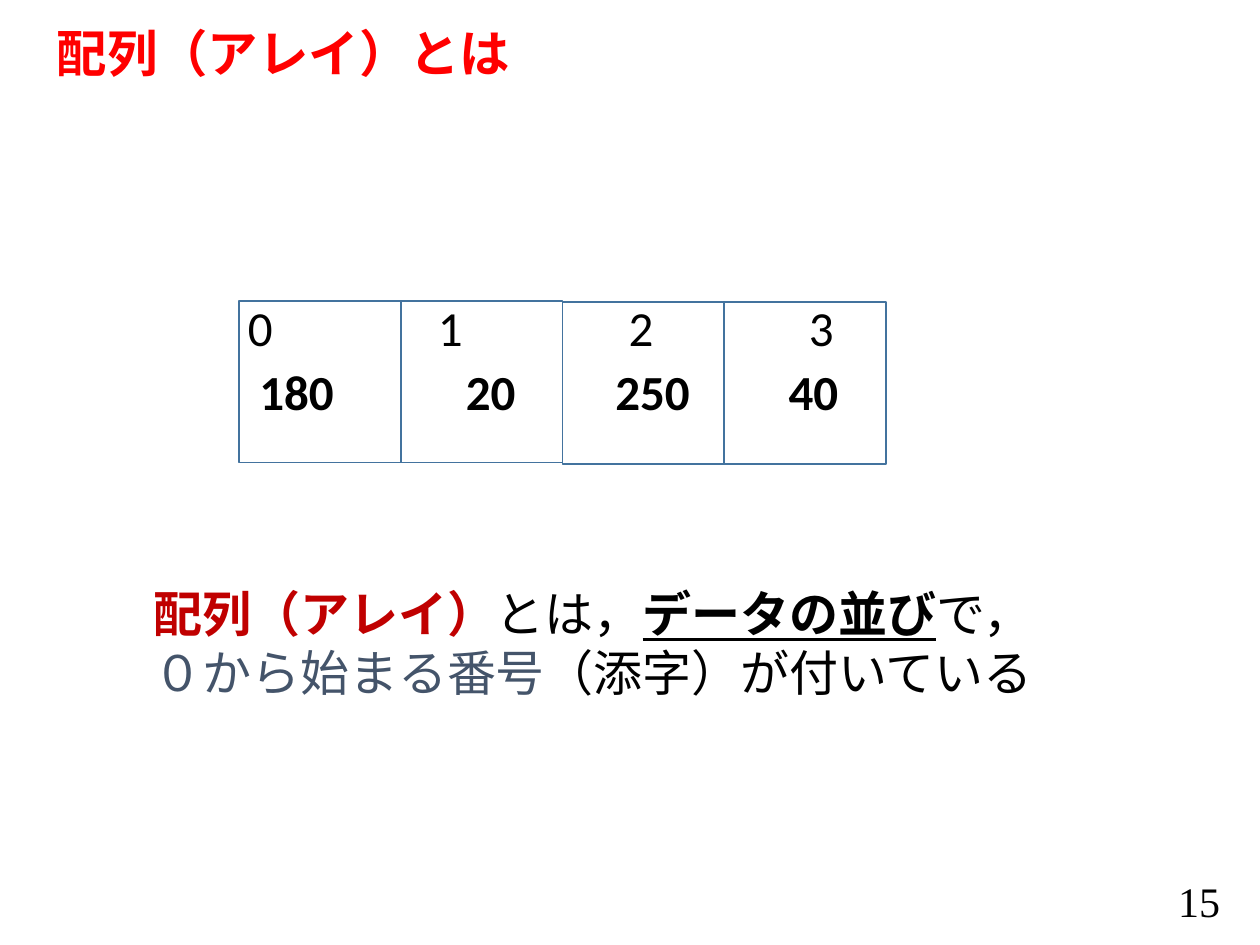
"""Build the slide that explains what an array is."""
from dataclasses import dataclass

from lxml import etree
from pptx import Presentation
from pptx.dml.color import RGBColor
from pptx.enum import shapes, text
from pptx.oxml import ns
from pptx.util import Pt


@dataclass
class Part:
    words: str
    color: str = "000000"
    size: float = 28
    font: str = "Arial"
    bold: bool = False
    underline: bool = False


@dataclass
class Box:
    left: float
    top: float
    width: float
    height: float

    def lengths(self) -> tuple:
        return tuple(Pt(v) for v in (self.left, self.top, self.width, self.height))


@dataclass
class Row:
    box: Box
    entries: list[str]
    tabs: list[float]
    bold: bool


def rgb(color: str) -> RGBColor:
    return RGBColor.from_string(color)


def write(paragraph, parts: list[Part]) -> None:
    for part in parts:
        run = paragraph.add_run()
        run.text = part.words
        run.font.name = part.font
        run.font.size = Pt(part.size)
        run.font.bold = part.bold
        run.font.underline = part.underline
        run.font.color.rgb = rgb(part.color)


def add_text(slide, box: Box, parts: list[Part]):
    frame = slide.shapes.add_textbox(*box.lengths()).text_frame
    frame.word_wrap = True
    write(frame.paragraphs[0], parts)
    return frame


def add_cell(slide, box: Box) -> None:
    cell = slide.shapes.add_shape(shapes.MSO_SHAPE.RECTANGLE, *box.lengths())
    cell.shadow.inherit = False
    cell.fill.background()
    cell.line.color.rgb = rgb("43739E")
    cell.line.width = Pt(1)


def add_row(slide, row: Row) -> None:
    words = "\t".join(row.entries)
    frame = add_text(slide, row.box, [Part(words, font="Calibri", bold=row.bold)])
    properties = frame.paragraphs[0]._p.get_or_add_pPr()
    stops = etree.SubElement(properties, ns.qn("a:tabLst"))
    for position in row.tabs:
        etree.SubElement(stops, ns.qn("a:tab"), pos=str(Pt(position)), algn="l")


def set_title(slide, box: Box, heading: Part) -> None:
    title = slide.shapes.title
    title.left, title.top, title.width, title.height = box.lengths()
    frame = title.text_frame
    frame.auto_size = text.MSO_AUTO_SIZE.NONE
    frame.vertical_anchor = text.MSO_ANCHOR.MIDDLE
    frame.paragraphs[0].alignment = text.PP_ALIGN.LEFT
    frame.paragraphs[0].line_spacing = 0.9
    write(frame.paragraphs[0], [heading])


def main() -> None:
    deck = Presentation()
    deck.slide_width, deck.slide_height = Pt(720), Pt(540)
    slide = deck.slides.add_slide(deck.slide_layouts[5])

    set_title(slide, Box(25.2, 13.7, 666, 36.7),
              Part("配列（アレイ）とは", "FF0000", 28.8, bold=True))

    add_text(slide, Box(80.6, 329.8, 543.6, 48.2), [
        Part("配列（アレイ）", "C00000", bold=True),
        Part("とは，"),
        Part("データの並び", bold=True, underline=True),
        Part("で，"),
        Part("０から始まる番号", "44546A"),
        Part("（添字）が付いている"),
    ])

    cell_size = 92.4
    for index in range(4):
        top = 172 if index < 2 else 172.6
        add_cell(slide, Box(136.6 + index * cell_size, top, cell_size, cell_size))

    for row in (
        Row(Box(141.1, 203, 364.3, 41), ["180", "20", "250", "40"],
            [118, 203.5, 302.5], True),
        Row(Box(134.6, 166.3, 364.3, 41), ["0", "1", "2", "3"],
            [108.5, 217.5, 320.5], False),
    ):
        add_row(slide, row)

    number = add_text(slide, Box(542.2, 500.4, 162, 28.8),
                      [Part("15", size=24, font="Times New Roman")])
    number.vertical_anchor = text.MSO_ANCHOR.MIDDLE
    number.paragraphs[0].alignment = text.PP_ALIGN.RIGHT

    deck.save("out.pptx")


if __name__ == "__main__":
    main()
